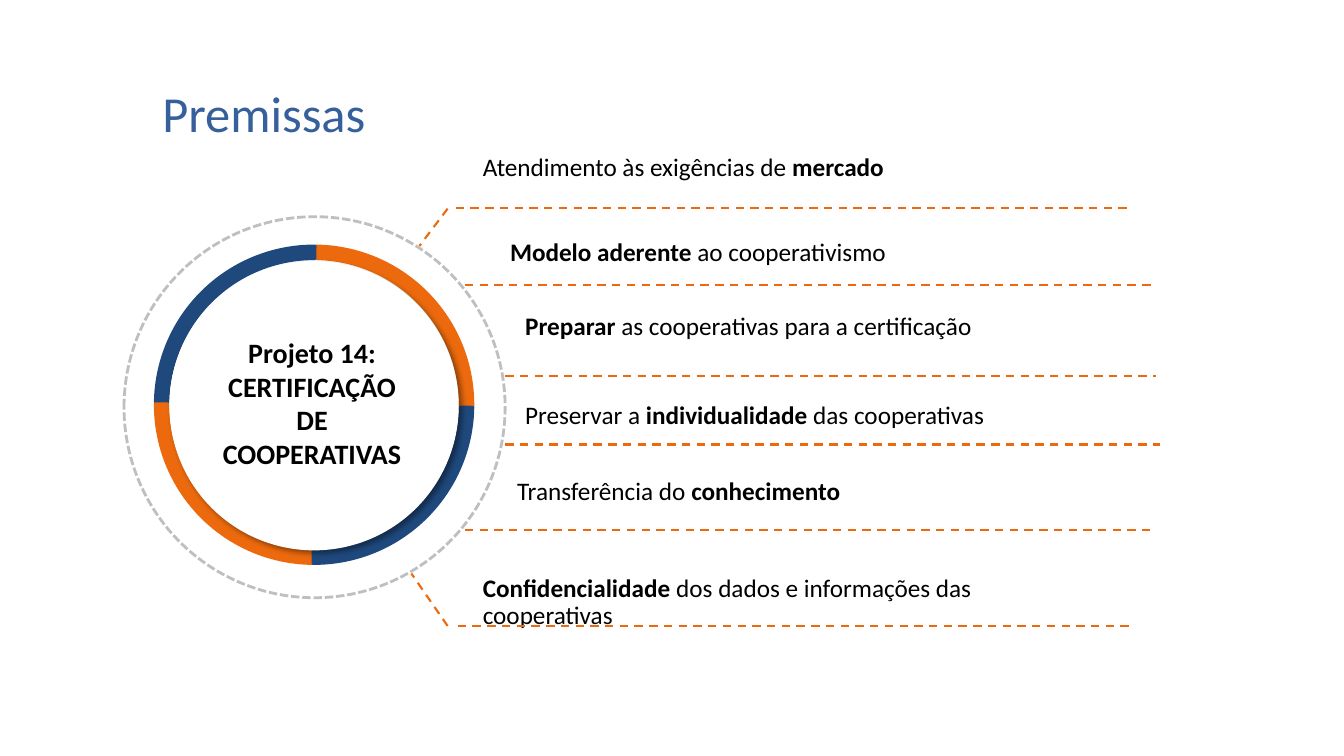
"""Builds the slide of premises around the certification project ring."""
from lxml.etree import SubElement
from pptx import Presentation
from pptx.dml.color import RGBColor
from pptx.enum.dml import MSO_LINE
from pptx.enum.shapes import MSO_CONNECTOR, MSO_SHAPE
from pptx.enum.text import MSO_ANCHOR, PP_ALIGN
from pptx.oxml.ns import qn
from pptx.util import Inches, Pt

ORANGE = RGBColor(0xEC, 0x6A, 0x0D)
NAVY = RGBColor(0x1F, 0x49, 0x7D)
TITLE_BLUE = RGBColor(0x35, 0x60, 0x9C)
GRAY = RGBColor(0xBF, 0xBF, 0xBF)
WHITE = RGBColor(0xFF, 0xFF, 0xFF)
BLACK = RGBColor(0, 0, 0)


def add_plain_shape(kind, left, top, size):
    shape = slide.shapes.add_shape(kind, Inches(left), Inches(top), Inches(size), Inches(size))
    shape.shadow.inherit = False
    return shape


def style_font(font, size, color, bold=False):
    font.name = "Calibri"
    font.size = Pt(size)
    font.color.rgb = color
    font.bold = bold


presentation = Presentation()
presentation.slide_width = Inches(13.33)
presentation.slide_height = Inches(7.5)
slide = presentation.slides.add_slide(presentation.slide_layouts[5])

title = slide.shapes.title
title.left, title.top, title.width, title.height = map(Inches, (1.51, 0.6, 8.95, 1.03))
title.text_frame.text = "Premissas"
title.text_frame.vertical_anchor = MSO_ANCHOR.MIDDLE
title_paragraph = title.text_frame.paragraphs[0]
title_paragraph.alignment = PP_ALIGN.LEFT
style_font(title_paragraph.runs[0].font, 36, TITLE_BLUE)

for rotation, color in ((0, ORANGE), (270, NAVY), (180, ORANGE), (90, NAVY)):
    arc = add_plain_shape(MSO_SHAPE.BLOCK_ARC, 1.54, 2.44, 3.15)
    arc.rotation = rotation
    for index, value in enumerate((162.54, 0.22, 0.04)):
        arc.adjustments[index] = value
    arc.fill.solid()
    arc.fill.fore_color.rgb = color
    arc.line.color.rgb = color
    arc.line.width = Pt(2)

disc = add_plain_shape(MSO_SHAPE.OVAL, 1.68, 2.59, 2.87)
disc.fill.solid()
disc.fill.fore_color.rgb = WHITE
disc.line.fill.background()
effects = disc._element.spPr.find(qn("a:effectLst"))
shadow = SubElement(effects, qn("a:outerShdw"), blurRad=str(Pt(4)), dist=str(Pt(3)),
                    dir=str(45 * 60000), algn="tl", rotWithShape="0")
shadow_color = SubElement(shadow, qn("a:srgbClr"), val=str(BLACK))
SubElement(shadow_color, qn("a:alpha"), val="40000")

orbit = add_plain_shape(MSO_SHAPE.OVAL, 1.23, 2.15, 3.78)
orbit.fill.background()
orbit.line.color.rgb = GRAY
orbit.line.width = Pt(2)
orbit.line.dash_style = MSO_LINE.SQUARE_DOT

premises = (
    (4.69, 1.49, 7.18, (("Atendimento às exigências de ", False), ("mercado", True))),
    (4.96, 2.33, 6.41, (("Modelo aderente ", True), ("ao cooperativismo", False))),
    (5.11, 3.06, 6.41, (("Preparar", True), (" as cooperativas para a certificação", False))),
    (5.11, 3.95, 6.42, (("Preservar a ", False), ("individualidade", True),
                        (" das cooperativas", False))),
    (5.03, 4.7, 6.73, (("Transferência do ", False), ("conhecimento", True))),
    (4.69, 5.66, 5.56, (("Confidencialidade ", True),
                        ("dos dados e informações das cooperativas", False))),
)
for left, top, width, parts in premises:
    box = slide.shapes.add_textbox(Inches(left), Inches(top), Inches(width), Inches(0.56))
    box.text_frame.word_wrap = True
    paragraph = box.text_frame.paragraphs[0]
    paragraph.line_spacing = 0.9
    for text, bold in parts:
        run = paragraph.add_run()
        run.text = text
        style_font(run.font, 18, BLACK, bold)

dashed_lines = (
    (4.52, 2.06, 11.21, 2.06),
    (4.61, 2.83, 11.47, 2.83),
    (5.01, 3.73, 11.47, 3.73),
    (5.01, 4.41, 11.51, 4.41),
    (4.61, 5.26, 11.41, 5.26),
    (4.54, 6.21, 11.23, 6.21),
    (4.44, 2.07, 4.16, 2.44),
    (4.44, 6.21, 4.08, 5.69),
)
for ends in dashed_lines:
    connector = slide.shapes.add_connector(MSO_CONNECTOR.STRAIGHT, *map(Inches, ends))
    connector.line.color.rgb = ORANGE
    connector.line.width = Pt(1.5)
    connector.line.dash_style = MSO_LINE.DASH
    SubElement(connector._element.spPr, qn("a:effectLst"))

project = slide.shapes.add_textbox(Inches(2.04), Inches(3.28), Inches(2.11), Inches(1.45))
project.text_frame.word_wrap = True
project.text_frame.text = "Projeto 14: CERTIFICAÇÃO DE COOPERATIVAS"
project_paragraph = project.text_frame.paragraphs[0]
project_paragraph.alignment = PP_ALIGN.CENTER
style_font(project_paragraph.runs[0].font, 20, BLACK, True)

presentation.save("out.pptx")
